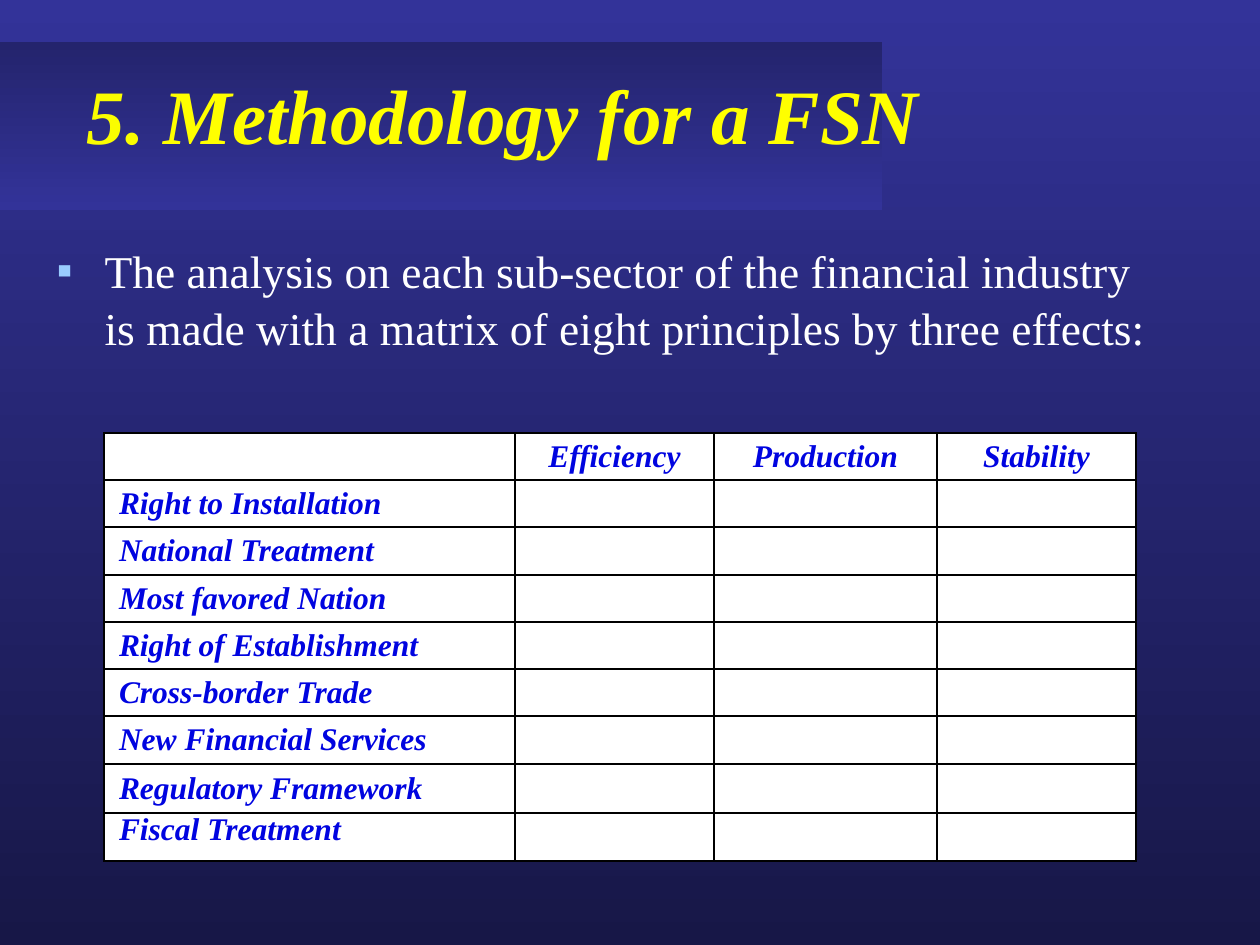
from lxml.etree import SubElement
from pptx import Presentation
from pptx.dml.color import RGBColor
from pptx.enum.shapes import MSO_SHAPE
from pptx.enum.text import MSO_ANCHOR, MSO_AUTO_SIZE, PP_ALIGN
from pptx.oxml import parse_xml
from pptx.oxml.ns import nsdecls, qn
from pptx.util import Emu, Pt

SCALE = 914400 / 126


def px(length):
    return Emu(round(length * SCALE))


def color(value):
    return RGBColor.from_string(value)


presentation = Presentation()
presentation.slide_width = px(1260)
presentation.slide_height = px(945)
slide = presentation.slides.add_slide(presentation.slide_layouts[1])
title, body = slide.placeholders

banner = slide.shapes.add_shape(MSO_SHAPE.RECTANGLE, 0, px(42), px(882), px(168))
banner.shadow.inherit = False
banner.line.fill.background()
slide.shapes._spTree.insert(2, banner._element)

for fill, stops in (
    (slide.background.fill, ("333399", "171747")),
    (banner.fill, ("24246D", "333399")),
):
    fill.gradient()
    fill.gradient_angle = 270
    for stop, value in zip(fill.gradient_stops, stops):
        stop.color.rgb = color(value)

for placeholder, box, anchor in (
    (title, (74, 35, 1071, 158), MSO_ANCHOR.MIDDLE),
    (body, (44, 234, 1131, 170), MSO_ANCHOR.TOP),
):
    placeholder.left, placeholder.top, placeholder.width, placeholder.height = map(px, box)
    placeholder.text_frame.auto_size = MSO_AUTO_SIZE.NONE
    placeholder.text_frame.word_wrap = True
    placeholder.text_frame.vertical_anchor = anchor

paragraph = title.text_frame.paragraphs[0]
paragraph.alignment = PP_ALIGN.LEFT
for text, value in (("5. ", "FAFD00"), ("Methodology for a FSN", "FFFF00")):
    run = paragraph.add_run()
    run.text = text
    run.font.name = "Times New Roman"
    run.font.size = Pt(44)
    run.font.bold = run.font.italic = True
    run.font.color.rgb = color(value)

paragraph = body.text_frame.paragraphs[0]
paragraph.text = (
    "The analysis on each sub-sector of the financial industry "
    "is made with a matrix of eight principles by three effects:"
)
paragraph.line_spacing = 1.05
paragraph.space_before = Pt(3)
font = paragraph.runs[0].font
font.name = "Times New Roman"
font.size = Pt(26)
font.color.rgb = color("FFFFFF")
properties = paragraph._p.get_or_add_pPr()
properties.set("marL", str(px(48)))
properties.set("indent", str(px(-48)))
bullet_color = SubElement(properties, qn("a:buClr"))
SubElement(bullet_color, qn("a:srgbClr"), val="99CCFF")
SubElement(properties, qn("a:buFont"), typeface="Times New Roman")
SubElement(properties, qn("a:buChar"), char="▪")

effects = ["Efficiency", "Production", "Stability"]
principles = [
    "Right to Installation",
    "National Treatment",
    "Most favored Nation",
    "Right of Establishment",
    "Cross-border Trade",
    "New Financial Services",
    "Regulatory Framework",
    "Fiscal Treatment",
]
rows = [["", *effects]] + [[principle, "", "", ""] for principle in principles]
column_widths = [411, 199, 223, 199]
row_heights = [47, 47, 48, 47, 47, 47, 48, 49, 48]

table = slide.shapes.add_table(
    len(rows), len(column_widths), px(104), px(433),
    px(sum(column_widths)), px(sum(row_heights)),
).table
for column, width in zip(table.columns, column_widths):
    column.width = px(width)
for row, height in zip(table.rows, row_heights):
    row.height = px(height)

for row_index, row in enumerate(rows):
    for column_index, text in enumerate(row):
        cell = table.cell(row_index, column_index)
        cell.margin_left = px(0 if column_index else 15)
        cell.margin_right = cell.margin_top = cell.margin_bottom = 0
        is_last = row_index == len(rows) - 1
        cell.vertical_anchor = MSO_ANCHOR.TOP if is_last else MSO_ANCHOR.MIDDLE
        cell.fill.solid()
        cell.fill.fore_color.rgb = color("FFFFFF")
        cell.text = text
        paragraph = cell.text_frame.paragraphs[0]
        paragraph.alignment = PP_ALIGN.CENTER if column_index else PP_ALIGN.LEFT
        for run in paragraph.runs:
            run.font.name = "Times New Roman"
            run.font.size = Pt(18)
            run.font.bold = run.font.italic = True
            run.font.color.rgb = color("0004E0")
        for position, side in enumerate(("lnL", "lnR", "lnT", "lnB")):
            border = parse_xml(
                f'<a:{side} {nsdecls("a")} w="{Pt(1)}"><a:solidFill>'
                f'<a:srgbClr val="000000"/></a:solidFill></a:{side}>'
            )
            cell._tc.get_or_add_tcPr().insert(position, border)

presentation.save("out.pptx")
